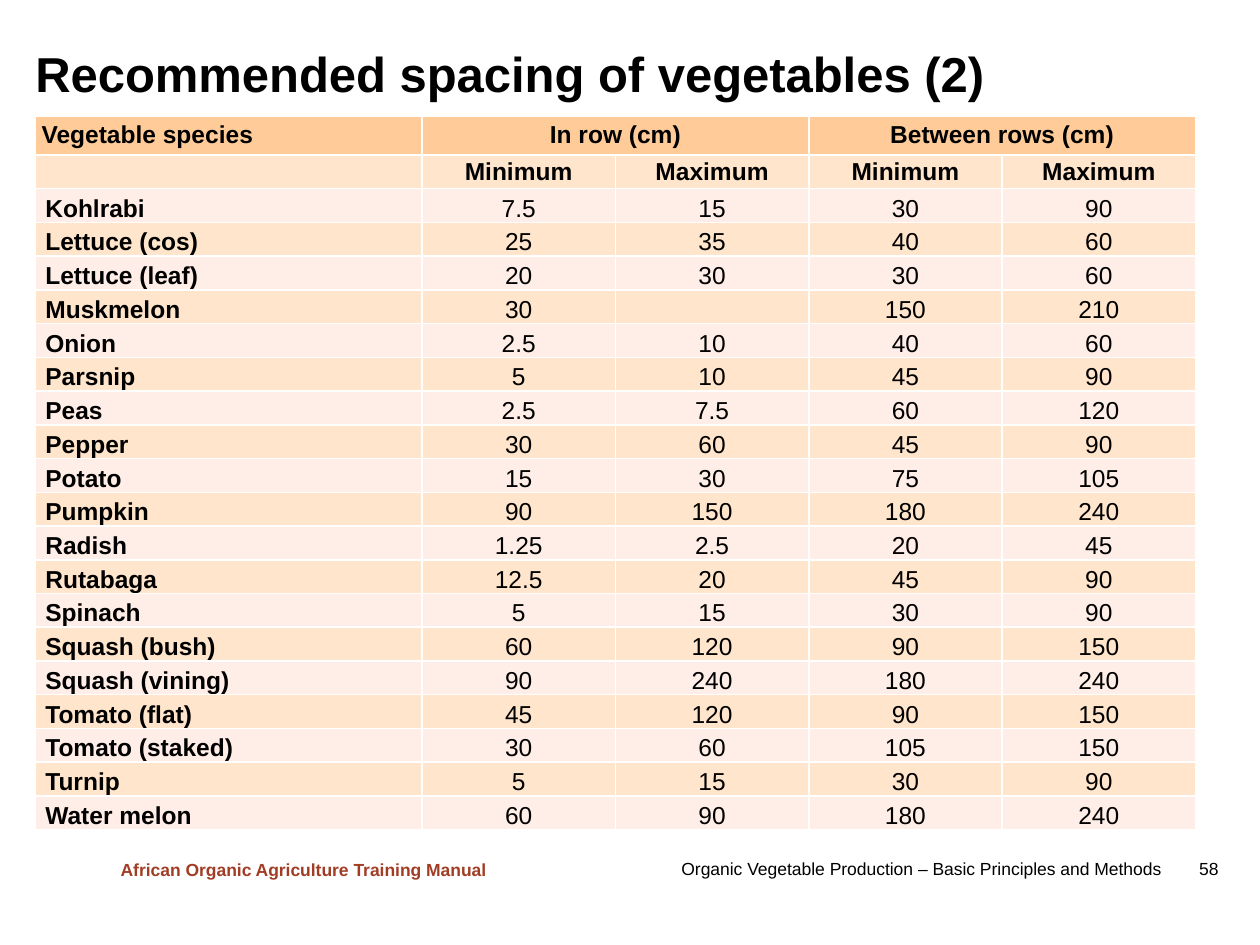
from dataclasses import dataclass

from lxml import etree
from pptx import Presentation
from pptx import util as u
from pptx.dml.color import RGBColor
from pptx.enum import text
from pptx.oxml import ns

COLORS = {
    "ink": "000000",
    "brick": "A23D25",
    "orange": "FFCC99",
    "blush": "FFEEE7",
    "border": "FFFFFF",
}
FONT = "Arial"
LEFT, CENTER = text.PP_ALIGN.LEFT, text.PP_ALIGN.CENTER
MIDDLE, BOTTOM = text.MSO_ANCHOR.MIDDLE, text.MSO_ANCHOR.BOTTOM


@dataclass
class Label:
    words: str
    left: float
    top: float
    width: float
    height: float
    size: int
    color: str = "ink"
    bold: bool = False
    wrap: bool = True
    anchor: text.MSO_ANCHOR = MIDDLE
    margins: tuple = (0.1, 0.05, 0.1, 0.05)
    tab: float = 0
    fits: bool = True


@dataclass
class Crop:
    name: str
    spacings: tuple


@dataclass
class CellStyle:
    fill: str
    alpha: int = 100
    anchor: text.MSO_ANCHOR = BOTTOM
    align: text.PP_ALIGN = CENTER
    bold: bool = False
    indent: float = 0


LABELS = [
    Label("Organic Vegetable Production – Basic Principles and Methods\t58",
          5.31, 6.76, 4.6, 0.27, 10, tab=4.11),
    Label("African Organic Agriculture Training Manual",
          0.86, 6.77, 3.14, 0.27, 10, "brick", True, False, text.MSO_ANCHOR.TOP),
    Label("Recommended spacing of vegetables (2)",
          0.28, 0.26, 9.02, 0.69, 28, bold=True, margins=(0, 0, 0.1, 0.05), fits=False),
]

GROUPS = ("Vegetable species", "In row (cm)", "", "Between rows (cm)", "")
LIMITS = ("", "Minimum", "Maximum", "Minimum", "Maximum")

CROPS = [
    Crop("Kohlrabi", ("7.5", "15", "30", "90")),
    Crop("Lettuce (cos)", ("25", "35", "40", "60")),
    Crop("Lettuce (leaf)", ("20", "30", "30", "60")),
    Crop("Muskmelon", ("30", "", "150", "210")),
    Crop("Onion", ("2.5", "10", "40", "60")),
    Crop("Parsnip", ("5", "10", "45", "90")),
    Crop("Peas", ("2.5", "7.5", "60", "120")),
    Crop("Pepper", ("30", "60", "45", "90")),
    Crop("Potato", ("15", "30", "75", "105")),
    Crop("Pumpkin", ("90", "150", "180", "240")),
    Crop("Radish", ("1.25", "2.5", "20", "45")),
    Crop("Rutabaga", ("12.5", "20", "45", "90")),
    Crop("Spinach", ("5", "15", "30", "90")),
    Crop("Squash (bush)", ("60", "120", "90", "150")),
    Crop("Squash (vining)", ("90", "240", "180", "240")),
    Crop("Tomato (flat)", ("45", "120", "90", "150")),
    Crop("Tomato (staked)", ("30", "60", "105", "150")),
    Crop("Turnip", ("5", "15", "30", "90")),
    Crop("Water melon", ("60", "90", "180", "240")),
]


def add_child(parent, tag: str, **attributes: str):
    return etree.SubElement(parent, ns.qn(tag), attributes)


def style_font(font, size: int, color: str, bold: bool) -> None:
    font.name = FONT
    font.size = u.Pt(size)
    font.bold = bold
    font.color.rgb = RGBColor.from_string(COLORS[color])


def draw_label(slide, label: Label) -> None:
    box = slide.shapes.add_textbox(*map(u.Inches, (label.left, label.top, label.width, label.height)))
    frame = box.text_frame
    frame.word_wrap = label.wrap
    frame.auto_size = text.MSO_AUTO_SIZE.SHAPE_TO_FIT_TEXT if label.fits else text.MSO_AUTO_SIZE.NONE
    frame.vertical_anchor = label.anchor
    frame.margin_left, frame.margin_top, frame.margin_right, frame.margin_bottom = map(u.Inches, label.margins)
    line = frame.paragraphs[0]
    line.text = label.words
    line.alignment = LEFT
    if label.tab:
        stops = add_child(line._p.get_or_add_pPr(), "a:tabLst")
        add_child(stops, "a:tab", pos=str(u.Inches(label.tab)), algn="l")
    style_font(line.font, label.size, label.color, label.bold)


def draw_cell(cell, words: str, style: CellStyle) -> None:
    properties = cell._tc.get_or_add_tcPr()
    for side in ("a:lnL", "a:lnR", "a:lnT", "a:lnB"):
        border = add_child(properties, side, w=str(u.Pt(1)))
        add_child(add_child(border, "a:solidFill"), "a:srgbClr", val=COLORS["border"])
    cell.fill.solid()
    cell.fill.fore_color.rgb = RGBColor.from_string(COLORS[style.fill])
    if style.alpha < 100:
        tint = properties.find(ns.qn("a:solidFill")).find(ns.qn("a:srgbClr"))
        add_child(tint, "a:alpha", val=str(style.alpha * 1000))
    cell.margin_left = u.Inches(style.indent)
    cell.margin_top = cell.margin_right = cell.margin_bottom = 0
    cell.vertical_anchor = style.anchor
    line = cell.text_frame.paragraphs[0]
    line.alignment = style.align
    style_font(line.font, 14, "ink", style.bold)
    if words:
        line.text = words
    else:
        add_child(line._p, "a:endParaRPr", sz="1400")


def cell_style(row: int, column: int) -> CellStyle:
    first = column == 0
    align = LEFT if first else CENTER
    if row == 0:
        return CellStyle("orange", 100, MIDDLE, align, True, 0.05 if first else 0)
    if row == 1:
        return CellStyle("orange", 50, MIDDLE, align, True)
    fill, alpha = ("blush", 100) if row % 2 == 0 else ("orange", 50)
    return CellStyle(fill, alpha, BOTTOM, align, first, 0.08 if first else 0)


def draw_spacing_table(slide) -> None:
    rows = [GROUPS, LIMITS] + [(crop.name, *crop.spacings) for crop in CROPS]
    width, height, species_width, header_height = 9.21, 5.67, 3.07, 0.31
    spacing = slide.shapes.add_table(
        len(rows), len(GROUPS), u.Inches(0.28), u.Inches(0.92), u.Inches(width), u.Inches(height)).table
    spacing.first_row = spacing.horz_banding = False
    for index, column in enumerate(spacing.columns):
        column.width = u.Inches(species_width if index == 0 else (width - species_width) / 4)
    for index, row in enumerate(spacing.rows):
        row.height = u.Inches(header_height if index == 0 else (height - header_height) / (len(rows) - 1))
    for r, row in enumerate(rows):
        for c, words in enumerate(row):
            draw_cell(spacing.cell(r, c), words, cell_style(r, c))
    for start in (1, 3):
        spacing.cell(0, start).merge(spacing.cell(0, start + 1))


def main() -> None:
    deck = Presentation()
    deck.slide_width, deck.slide_height = u.Inches(10), u.Inches(7.5)
    slide = deck.slides.add_slide(deck.slide_layouts[6])
    for label in LABELS:
        draw_label(slide, label)
    draw_spacing_table(slide)
    deck.save("out.pptx")


if __name__ == "__main__":
    main()
